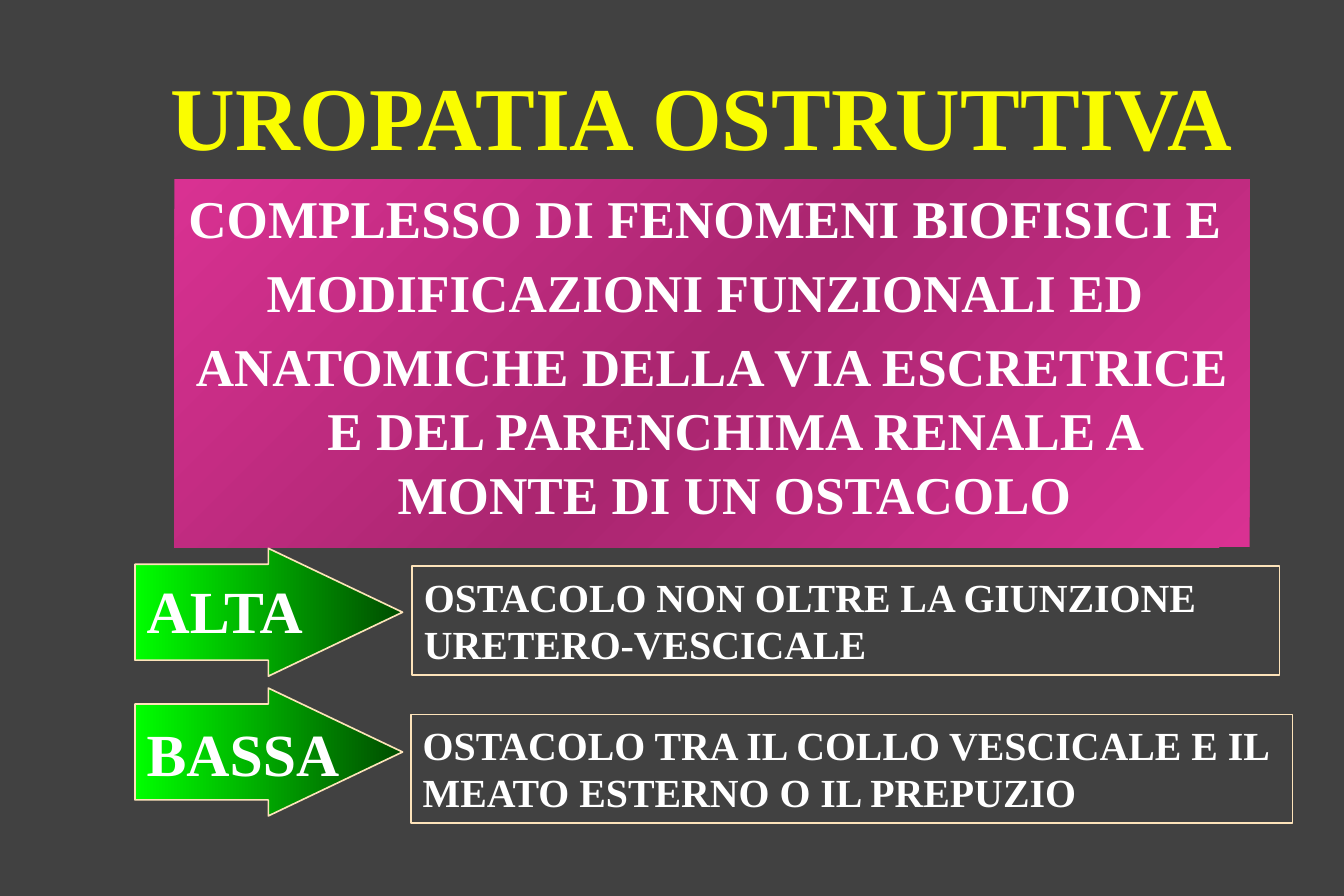
from lxml import etree
from pptx import Presentation
from pptx import util as u
from pptx.dml.color import RGBColor
from pptx.enum import shapes, text
from pptx.oxml.ns import qn

WHITE, YELLOW, CREAM = "FFFFFF", "FAFD00", "FDE3BA"
GREENS = [(0, "00FF00"), (100, "004C00")]
PINKS = [(0, "D93192"), (50, "AA2670"), (100, "D93192")]


def px(length):
    return u.Emu(length * 9144)


def color(value):
    return RGBColor.from_string(value)


class SlideBuilder:
    """Draw styled elements on one slide, in px of 1/100 inch."""

    font = "Times New Roman"

    def __init__(self, presentation, background):
        self.slide = presentation.slides.add_slide(presentation.slide_layouts[5])
        self.slide.background.fill.solid()
        self.slide.background.fill.fore_color.rgb = color(background)

    def add_lines(self, shape, lines, size, ink=WHITE, align=text.PP_ALIGN.LEFT,
                  anchor=text.MSO_ANCHOR.TOP, before=0, hanging=0, wrap=True):
        frame = shape.text_frame
        frame.word_wrap = wrap
        frame.auto_size = text.MSO_AUTO_SIZE.NONE
        frame.vertical_anchor = anchor
        frame.margin_left = frame.margin_right = px(10)
        frame.margin_top = frame.margin_bottom = px(5)
        for index, line in enumerate(lines):
            paragraph = frame.add_paragraph() if index else frame.paragraphs[0]
            paragraph.alignment = align
            paragraph.space_before = u.Pt(before if index else 0)
            if hanging:
                properties = paragraph._p.get_or_add_pPr()
                properties.set("marL", str(px(hanging)))
                properties.set("indent", str(-px(hanging)))
            run = paragraph.add_run()
            run.text = line
            run.font.name = self.font
            run.font.size = u.Pt(size)
            run.font.bold = True
            run.font.color.rgb = color(ink)

    def title(self, box, line, size):
        shape = self.slide.shapes.title
        shape.left, shape.top, shape.width, shape.height = map(px, box)
        self.add_lines(shape, [line], size, YELLOW, text.PP_ALIGN.CENTER,
                       text.MSO_ANCHOR.MIDDLE)

    def shape(self, kind, box, stops=None, angle=0, outline=None):
        shape = self.slide.shapes.add_shape(kind, *map(px, box))
        shape.shadow.inherit = False
        if stops:
            self.gradient(shape, stops, angle)
        else:
            shape.fill.background()
        if outline:
            shape.line.color.rgb = color(outline)
            shape.line.width = u.Pt(1)
        else:
            shape.line.fill.background()
        return shape

    def gradient(self, shape, stops, angle):
        shape.fill.gradient()
        shape.fill.gradient_angle = angle
        stop_list = shape._element.spPr.find(".//" + qn("a:gsLst"))
        for old_stop in list(stop_list):
            stop_list.remove(old_stop)
        for position, value in stops:
            stop = etree.SubElement(stop_list, qn("a:gs"), pos=str(position * 1000))
            etree.SubElement(stop, qn("a:srgbClr"), val=value)

    def arrow(self, box):
        arrow = self.shape(shapes.MSO_SHAPE.RIGHT_ARROW, box, GREENS, outline=CREAM)
        arrow.adjustments[0], arrow.adjustments[1] = 0.75, 1.05

    def panel(self, box, lines, size, stops=None, angle=0, outline=None, **style):
        panel = self.shape(shapes.MSO_SHAPE.RECTANGLE, box, stops, angle, outline)
        self.add_lines(panel, lines, size, **style)

    def label(self, box, lines, size, **style):
        label = self.slide.shapes.add_textbox(*map(px, box))
        self.add_lines(label, lines, size, **style)


def main():
    presentation = Presentation()
    presentation.slide_width, presentation.slide_height = px(1125), px(750)
    builder = SlideBuilder(presentation, "414141")
    builder.title((71, 42, 1033, 108), "UROPATIA OSTRUTTIVA", 54)
    builder.panel(
        (146, 150, 900, 308),
        ["COMPLESSO DI FENOMENI BIOFISICI E ",
         "MODIFICAZIONI FUNZIONALI ED ",
         "ANATOMICHE DELLA VIA ESCRETRICE E DEL PARENCHIMA RENALE A MONTE DI UN OSTACOLO"],
        32, PINKS, 315, align=text.PP_ALIGN.CENTER, before=6.4, hanging=38)
    for top in (459, 576):
        builder.arrow((113, top, 224, 107))
    builder.label((113, 475, 200, 190), ["ALTA", "BASSA"], 36, before=43)
    builder.panel((345, 474, 726, 91),
                  ["OSTACOLO NON OLTRE LA GIUNZIONE URETERO-VESCICALE"],
                  24, outline=CREAM)
    builder.panel((344, 598, 738, 91),
                  ["OSTACOLO TRA IL COLLO VESCICALE E IL", "MEATO ESTERNO O IL PREPUZIO"],
                  24, outline=CREAM, wrap=False)
    presentation.save("out.pptx")


if __name__ == "__main__":
    main()
